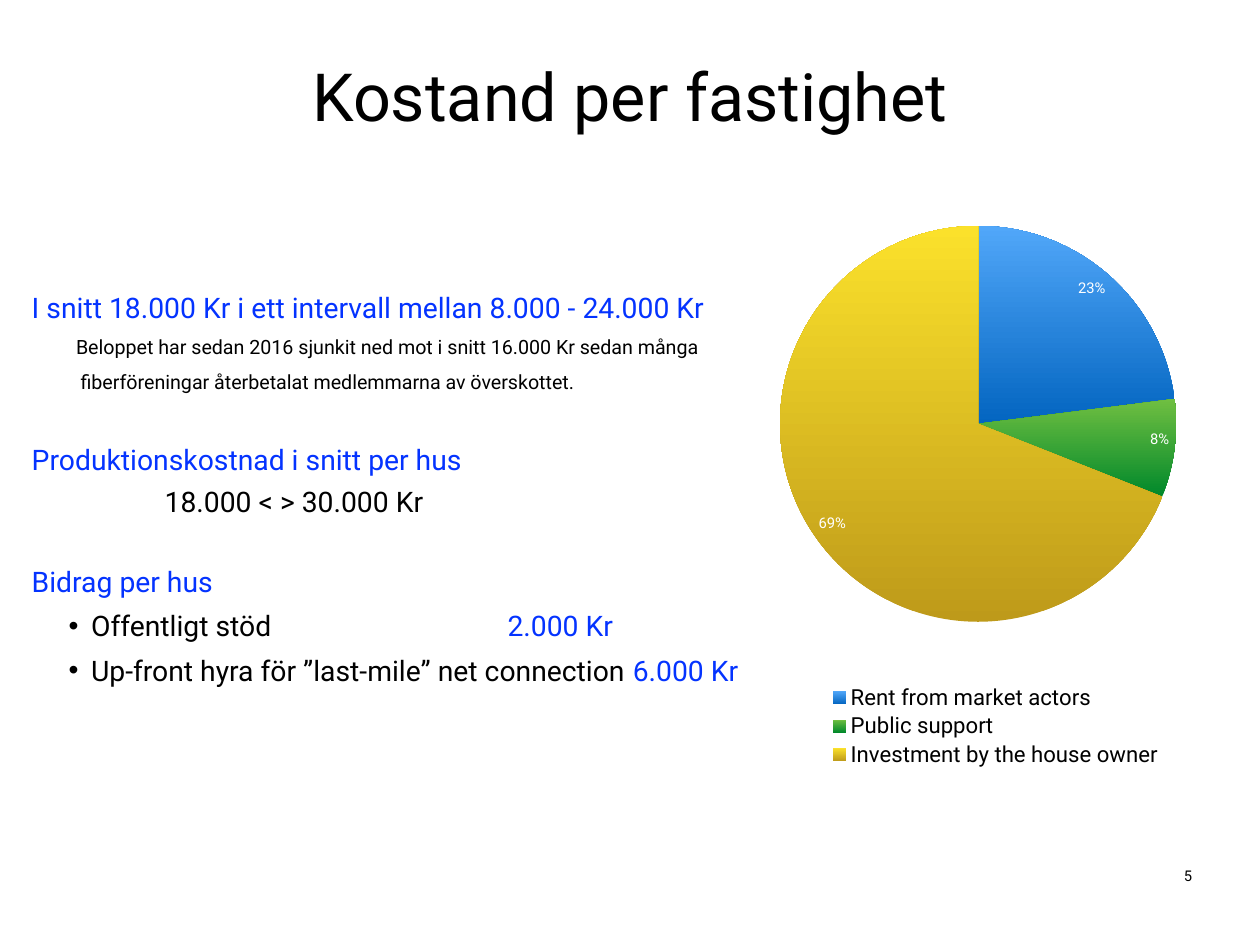
from dataclasses import dataclass
from typing import Any

from lxml.etree import SubElement
from pptx import Presentation
from pptx.chart.data import CategoryChartData
from pptx.dml.color import RGBColor
from pptx.enum.chart import XL_CHART_TYPE as ChartType
from pptx.enum.chart import XL_LABEL_POSITION as LabelPos
from pptx.enum.chart import XL_LEGEND_POSITION as LegendPos
from pptx.enum.text import MSO_ANCHOR as Anchor
from pptx.enum.text import MSO_AUTO_SIZE as AutoSize
from pptx.enum.text import PP_ALIGN as Align
from pptx.oxml import parse_xml
from pptx.oxml.ns import nsdecls, qn
from pptx.util import Cm, Pt

FONT = "Roboto"
BLACK, BLUE, WHITE = "000000", "0433FF", "FFFFFF"


@dataclass
class Line:
    """One paragraph of the body; each run is (text, colour)."""
    runs: list[tuple[str, str]]
    size: float = 23
    spacing: float = 1.2
    before: float = 0
    margin: float = 0
    indent: float = 0
    bullet: bool = False
    tab: float = 0


@dataclass
class Slice:
    label: str
    value: int
    dark: str
    light: str


LINES = [
    Line([("I snitt 18.000 Kr i ett intervall mellan 8.000 - 24.000 Kr", BLUE)]),
    Line([("Beloppet har sedan 2016 sjunkit ned mot i snitt 16.000 Kr sedan många", BLACK)],
         size=16, before=5, indent=1.27),
    Line([("fiberföreningar återbetalat medlemmarna av överskottet.", BLACK)],
         size=16, before=5, indent=1.4),
    Line([("Produktionskostnad i snitt per hus", BLUE)], spacing=1.3, before=31.5),
    Line([("18.000 < > 30.000 Kr", BLACK)], before=1, indent=3.81),
    Line([("Bidrag per hus", BLUE)], before=32),
    Line([("Offentligt stöd\t", BLACK), ("2.000 Kr", BLUE)],
         before=3, margin=1.7, indent=-0.64, bullet=True, tab=13.64),
    Line([("Up-front hyra för ”last-mile” net connection ", BLACK), ("6.000 Kr", BLUE)],
         before=3, margin=1.7, indent=-0.64, bullet=True),
]

SLICES = [
    Slice("Rent from market actors", 23, "0365C0", "51A7F9"),
    Slice("Public support", 8, "00882B", "70BF41"),
    Slice("Investment by the house owner", 69, "BE9A1A", "FBE12B"),
]


def rgb(value: str) -> RGBColor:
    return RGBColor.from_string(value)


def apply(target: Any, values: dict[str, Any]) -> None:
    for name, value in values.items():
        setattr(target, name, value)


def set_font(font: Any, size: float, color: str) -> None:
    apply(font, {"name": FONT, "size": Pt(size), "bold": False})
    font.color.rgb = rgb(color)


def place(shape: Any, left: float, top: float, width: float, height: float) -> None:
    apply(shape, {"left": Cm(left), "top": Cm(top),
                  "width": Cm(width), "height": Cm(height)})


def set_frame(tf: Any, anchor: Any, margin: float = 0, wrap: bool = True) -> None:
    apply(tf, {"word_wrap": wrap, "auto_size": AutoSize.NONE, "vertical_anchor": anchor})
    for side in ("left", "top", "right", "bottom"):
        setattr(tf, f"margin_{side}", Cm(margin))


def add_run(p: Any, text: str, size: float, color: str) -> None:
    r = p.add_run()
    r.text = text
    set_font(r.font, size, color)


def write_line(p: Any, line: Line) -> None:
    ppr = p._p.get_or_add_pPr()
    ppr.set("marL", str(Cm(line.margin)))
    ppr.set("indent", str(Cm(line.indent)))
    if line.bullet:
        SubElement(ppr, qn("a:buChar")).set("char", "•")
    else:
        SubElement(ppr, qn("a:buNone"))
    if line.tab:
        tab = SubElement(SubElement(ppr, qn("a:tabLst")), qn("a:tab"))
        tab.set("pos", str(Cm(line.tab)))
        tab.set("algn", "l")
    apply(p, {"alignment": Align.LEFT, "line_spacing": line.spacing,
              "space_before": Pt(line.before), "space_after": Pt(0)})
    for text, color in line.runs:
        add_run(p, text, line.size, color)


def manual_layout(x: float, y: float, w: float, h: float, inner: bool = False) -> Any:
    target = '<c:layoutTarget val="inner"/>' if inner else ""
    return parse_xml(
        f'<c:layout {nsdecls("c")}><c:manualLayout>{target}'
        '<c:xMode val="edge"/><c:yMode val="edge"/>'
        f'<c:x val="{x}"/><c:y val="{y}"/><c:w val="{w}"/><c:h val="{h}"/>'
        '</c:manualLayout></c:layout>')


def add_pie(s: Any) -> None:
    data = CategoryChartData()
    data.categories = [part.label for part in SLICES]
    data.add_series("Series 1", [part.value for part in SLICES])
    chart = s.shapes.add_chart(ChartType.PIE, Cm(22.1), Cm(6.32),
                               Cm(12.37), Cm(15.77), data).chart
    chart.has_title = False
    set_font(chart.font, 10, BLACK)

    # Slices, dark at the bottom and light at the top
    plot = chart.plots[0]
    plot.vary_by_categories = True
    for i, part in enumerate(SLICES):
        fill = plot.series[0].points[i].format.fill
        fill.gradient()
        fill.gradient_angle = 90
        for stop, color in zip(fill.gradient_stops, (part.dark, part.light)):
            stop.color.rgb = rgb(color)

    # Percentages
    plot.has_data_labels = True
    labels = plot.data_labels
    apply(labels, {"show_percentage": True, "show_value": False,
                   "number_format": "#,##0%", "number_format_is_linked": False,
                   "position": LabelPos.INSIDE_END})
    set_font(labels.font, 12, WHITE)

    # Legend
    chart.has_legend = True
    legend = chart.legend
    apply(legend, {"position": LegendPos.BOTTOM, "include_in_layout": True})
    set_font(legend.font, 18, BLACK)

    # Places of pie and legend inside the chart
    area = plot._element.getparent()
    for parent in (area, legend._element):
        for old in parent.findall(qn("c:layout")):
            parent.remove(old)
    area.insert(0, manual_layout(0.01, 0.01, 0.94, 0.72, inner=True))
    legend._element.find(qn("c:legendPos")).addnext(manual_layout(0.12, 0.84, 0.8, 0.16))


def main() -> None:
    prs = Presentation()
    apply(prs, {"slide_width": Cm(36.12), "slide_height": Cm(27.1)})
    s = prs.slides.add_slide(prs.slide_layouts[1])

    # Title
    title = s.shapes.title
    place(title, 2.64, 1.09, 30.84, 3.25)
    set_frame(title.text_frame, Anchor.MIDDLE)
    p = title.text_frame.paragraphs[0]
    p.alignment = Align.CENTER
    add_run(p, "Kostand per fastighet", 54, BLACK)

    # Body
    body = s.placeholders[1]
    place(body, 0.91, 5.59, 22.86, 17.7)
    tf = body.text_frame
    set_frame(tf, Anchor.TOP)
    tf.margin_top = Cm(2.54)
    for i, line in enumerate(LINES):
        write_line(tf.add_paragraph() if i else tf.paragraphs[0], line)

    add_pie(s)

    # Page number
    number = s.shapes.add_textbox(Cm(33.78), Cm(24.74), Cm(0.53), Cm(0.74))
    set_frame(number.text_frame, Anchor.MIDDLE, margin=0.13, wrap=False)
    p = number.text_frame.paragraphs[0]
    p.alignment = Align.RIGHT
    add_run(p, "5", 12, BLACK)

    prs.save("out.pptx")


if __name__ == "__main__":
    main()
